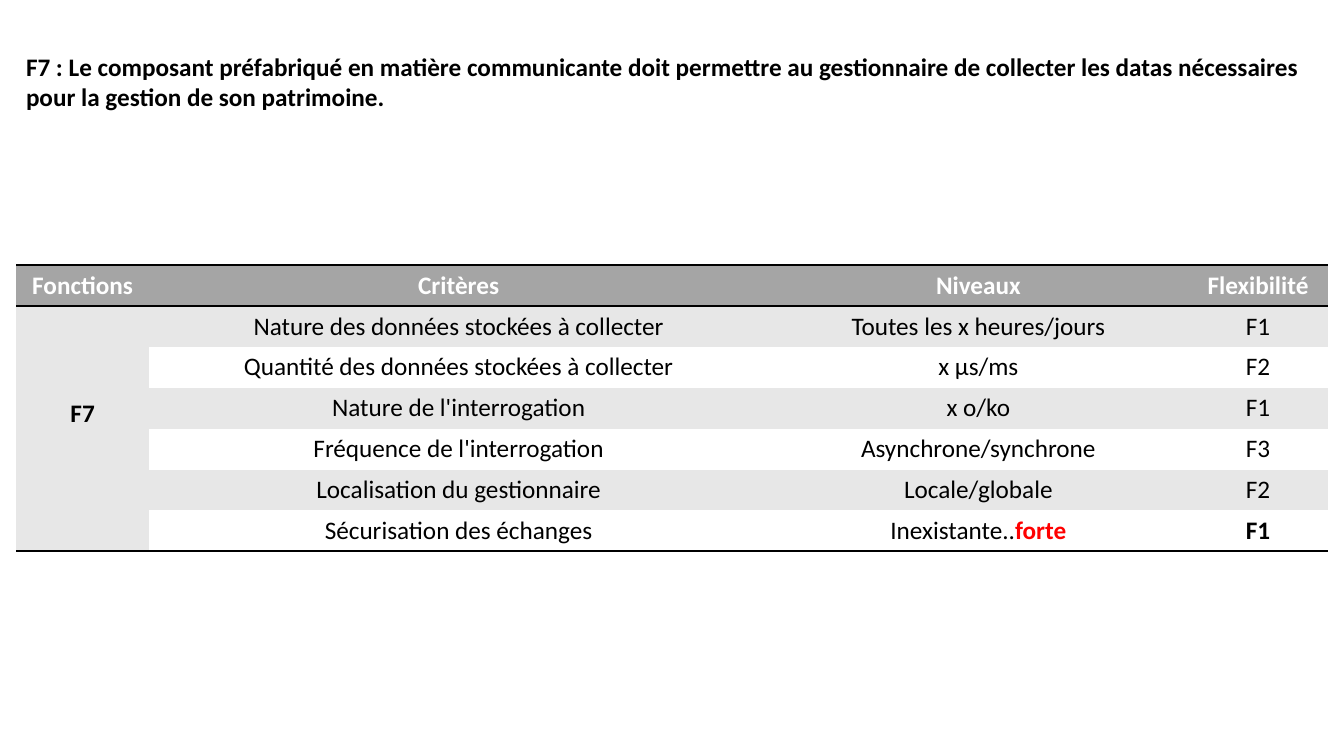
from lxml.etree import SubElement
from pptx import Presentation
from pptx.dml.color import RGBColor
from pptx.enum.text import MSO_ANCHOR, MSO_AUTO_SIZE, PP_ALIGN
from pptx.oxml.ns import qn
from pptx.util import Inches, Pt

COLORS = {
    "black": "000000",
    "white": "FFFFFF",
    "red": "FF0000",
    "header": "A5A5A5",
    "band": "E7E7E7",
}
NO_STYLE = "{2D5ABB26-0587-4C30-8999-92F81FD0307C}"

HEADING = (
    "F7 : Le composant préfabriqué en matière communicante doit permettre au gestionnaire "
    "de collecter les datas nécessaires pour la gestion de son patrimoine."
)
HEADERS = ["Fonctions", "Critères", "Niveaux", "Flexibilité"]
CRITERIA = [
    ("Nature des données stockées à collecter", "Toutes les x heures/jours", "F1"),
    ("Quantité des données stockées à collecter", "x µs/ms", "F2"),
    ("Nature de l'interrogation", "x o/ko", "F1"),
    ("Fréquence de l'interrogation", "Asynchrone/synchrone", "F3"),
    ("Localisation du gestionnaire", "Locale/globale", "F2"),
    ("Sécurisation des échanges", "Inexistante..", "F1"),
]
COLUMN_SHARES = [9.9, 46.06, 31.28, 10.35]
ROW_SHARE = 5.4


def add_span(para, text, color="black", bold=False, size=18, font="Calibri"):
    span = para.add_run()
    span.text = text
    span.font.name = font
    span.font.size = Pt(size)
    span.font.bold = bold
    span.font.color.rgb = RGBColor.from_string(COLORS[color])


class SlideBuilder:
    """Draws on one slide; lengths are percentages of the slide's size."""

    def __init__(self, deck):
        self.deck = deck
        self.slide = deck.slides.add_slide(deck.slide_layouts[6])

    def across(self, share):
        return round(self.deck.slide_width * share / 100)

    def down(self, share):
        return round(self.deck.slide_height * share / 100)

    def frame(self, left, top, width, height):
        return self.across(left), self.down(top), self.across(width), self.down(height)

    def heading(self, text, *place):
        box = self.slide.shapes.add_textbox(*self.frame(*place))
        box.text_frame.word_wrap = True
        box.text_frame.auto_size = MSO_AUTO_SIZE.SHAPE_TO_FIT_TEXT
        add_span(box.text_frame.paragraphs[0], text, bold=True)

    def table(self, row_count, column_shares, row_share, left, top):
        place = self.frame(left, top, sum(column_shares), row_share * row_count)
        shape = self.slide.shapes.add_table(row_count, len(column_shares), *place)
        table = shape.table
        table.first_row = table.horz_banding = False
        table._tbl.tblPr.find(qn("a:tableStyleId")).text = NO_STYLE
        for column, share in zip(table.columns, column_shares):
            column.width = self.across(share)
        for row in table.rows:
            row.height = self.down(row_share)
        return table

    def cell(self, cell, text, fill, edges=(), **style):
        for edge in edges:
            self.border(cell, edge)
        cell.fill.solid()
        cell.fill.fore_color.rgb = RGBColor.from_string(COLORS[fill])
        para = cell.text_frame.paragraphs[0]
        para.alignment = PP_ALIGN.CENTER
        if text:
            add_span(para, text, **style)

    def border(self, cell, edge, width=2):
        properties = cell._tc.get_or_add_tcPr()
        line = SubElement(properties, qn(f"a:{edge}"), w=str(Pt(width)))
        fill = SubElement(line, qn("a:solidFill"))
        SubElement(fill, qn("a:srgbClr"), val=COLORS["black"])


def main():
    deck = Presentation()
    deck.slide_width, deck.slide_height = Inches(13.33), Inches(7.5)
    builder = SlideBuilder(deck)

    last = len(CRITERIA)
    table = builder.table(last + 1, COLUMN_SHARES, ROW_SHARE, 1.2, 35.07)
    for column, title in enumerate(HEADERS):
        builder.cell(table.cell(0, column), title, "header", ("lnT", "lnB"),
                     color="white", bold=True)
    for row, values in enumerate(CRITERIA, start=1):
        edges = ("lnB",) if row == last else ()
        function_edges = ("lnB",) if row in (1, last) else ()
        builder.cell(table.cell(row, 0), "F7" if row == 1 else "", "band",
                     function_edges, bold=True)
        for column, value in enumerate(values, start=1):
            builder.cell(table.cell(row, column), value, "band" if row % 2 else "white",
                         edges, bold=row == last and column == 3)
    add_span(table.cell(last, 2).text_frame.paragraphs[0], "forte", color="red", bold=True)

    function_cell = table.cell(1, 0)
    function_cell.merge(table.cell(last, 0))
    function_cell.vertical_anchor = MSO_ANCHOR.MIDDLE
    function_cell.margin_bottom = Inches(0.35)

    builder.heading(HEADING, 1.2, 6.13, 97.6, 9.47)
    deck.save("out.pptx")


if __name__ == "__main__":
    main()
